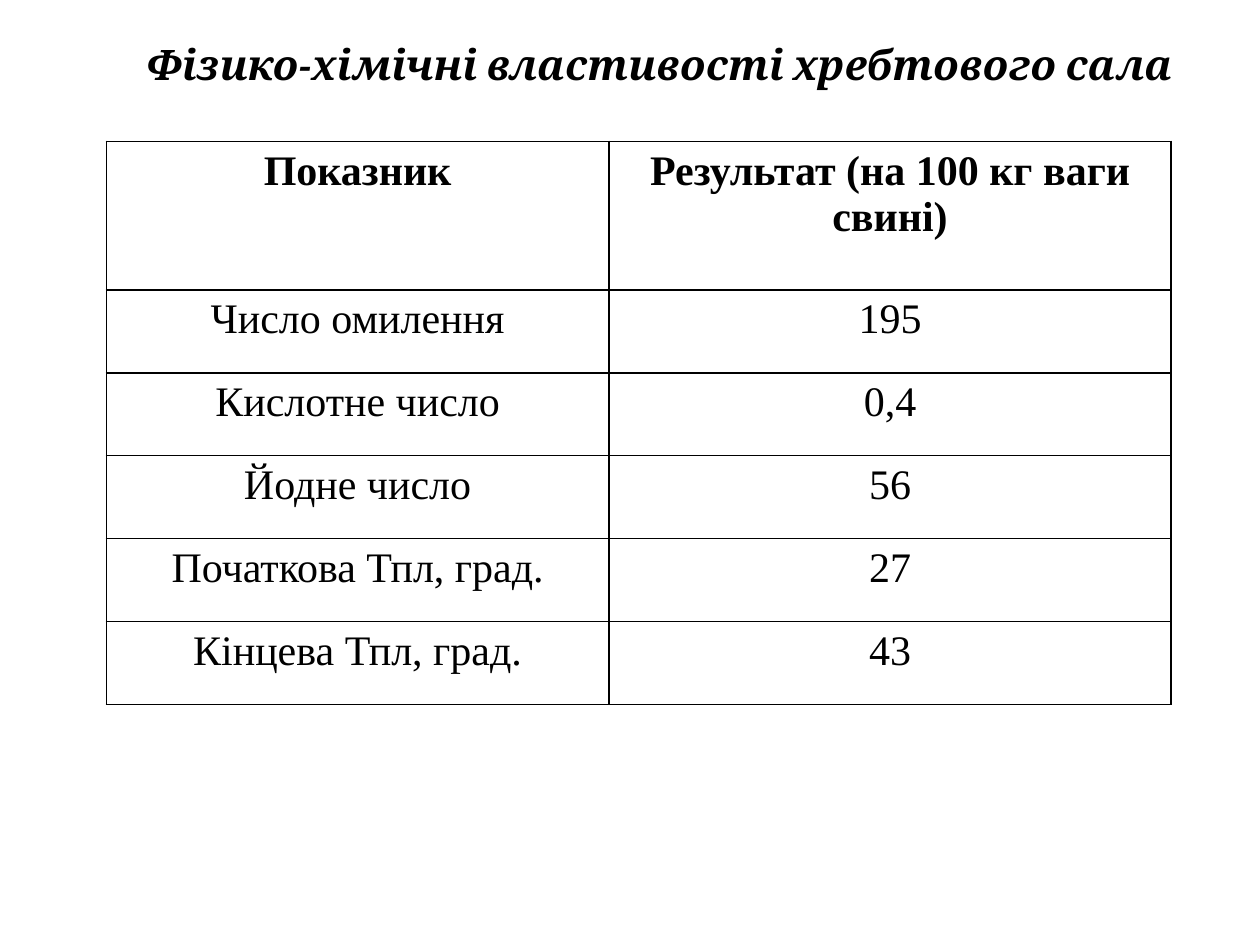
from lxml import etree
from pptx import Presentation
from pptx.dml.color import RGBColor
from pptx.enum import text
from pptx.oxml import ns
from pptx.util import Pt

BLACK = "000000"
WHITE = "FFFFFF"
TITLE = "Фізико-хімічні властивості хребтового сала"
ROWS = [
    ("Показник", "Результат (на 100 кг ваги свині)"),
    ("Число омилення", "195"),
    ("Кислотне число", "0,4"),
    ("Йодне число", "56"),
    ("Початкова Тпл, град.", "27"),
    ("Кінцева Тпл, град.", "43"),
]


def color(value):
    return RGBColor.from_string(value)


def style(paragraph, font_name, bold=False, italic=False):
    for span in paragraph.runs:
        span.font.name = font_name
        span.font.size = Pt(24)
        span.font.bold = bold
        span.font.italic = italic
        span.font.color.rgb = color(BLACK)


def add_borders(cell):
    properties = cell._tc.get_or_add_tcPr()
    for index, side in enumerate(("lnL", "lnR", "lnT", "lnB")):
        line = etree.Element(ns.qn(f"a:{side}"), w=str(Pt(1)))
        fill = etree.SubElement(line, ns.qn("a:solidFill"))
        etree.SubElement(fill, ns.qn("a:srgbClr"), val=BLACK)
        properties.insert(index, line)


def add_title(page, left, top, width, height):
    box = page.shapes.add_textbox(Pt(left), Pt(top), Pt(width), Pt(height))
    frame = box.text_frame
    frame.word_wrap = True
    frame.auto_size = text.MSO_AUTO_SIZE.SHAPE_TO_FIT_TEXT
    frame.text = TITLE
    style(frame.paragraphs[0], "Cambria", bold=True, italic=True)


def add_properties_table(page, left, top, width, height):
    header_height = 85
    first_width = width * 0.472
    row_height = (height - header_height) / (len(ROWS) - 1)
    table = page.shapes.add_table(
        len(ROWS), 2, Pt(left), Pt(top), Pt(width), Pt(height)
    ).table
    table.columns[0].width = Pt(first_width)
    table.columns[1].width = Pt(width - first_width)
    for row_index, values in enumerate(ROWS):
        header = row_index == 0
        table.rows[row_index].height = Pt(header_height if header else row_height)
        for column_index, value in enumerate(values):
            cell = table.cell(row_index, column_index)
            cell.text_frame.text = value
            paragraph = cell.text_frame.paragraphs[0]
            paragraph.alignment = text.PP_ALIGN.CENTER
            style(paragraph, "Times New Roman", bold=header)
            cell.fill.solid()
            cell.fill.fore_color.rgb = color(WHITE)
            add_borders(cell)


def main():
    deck = Presentation()
    deck.slide_width, deck.slide_height = Pt(720), Pt(540)
    page = deck.slides.add_slide(deck.slide_layouts[6])
    add_title(page, 76.5, 18.5, 643.5, 36)
    add_properties_table(page, 60.75, 80.75, 608.5, 321.75)
    deck.save("out.pptx")


if __name__ == "__main__":
    main()
